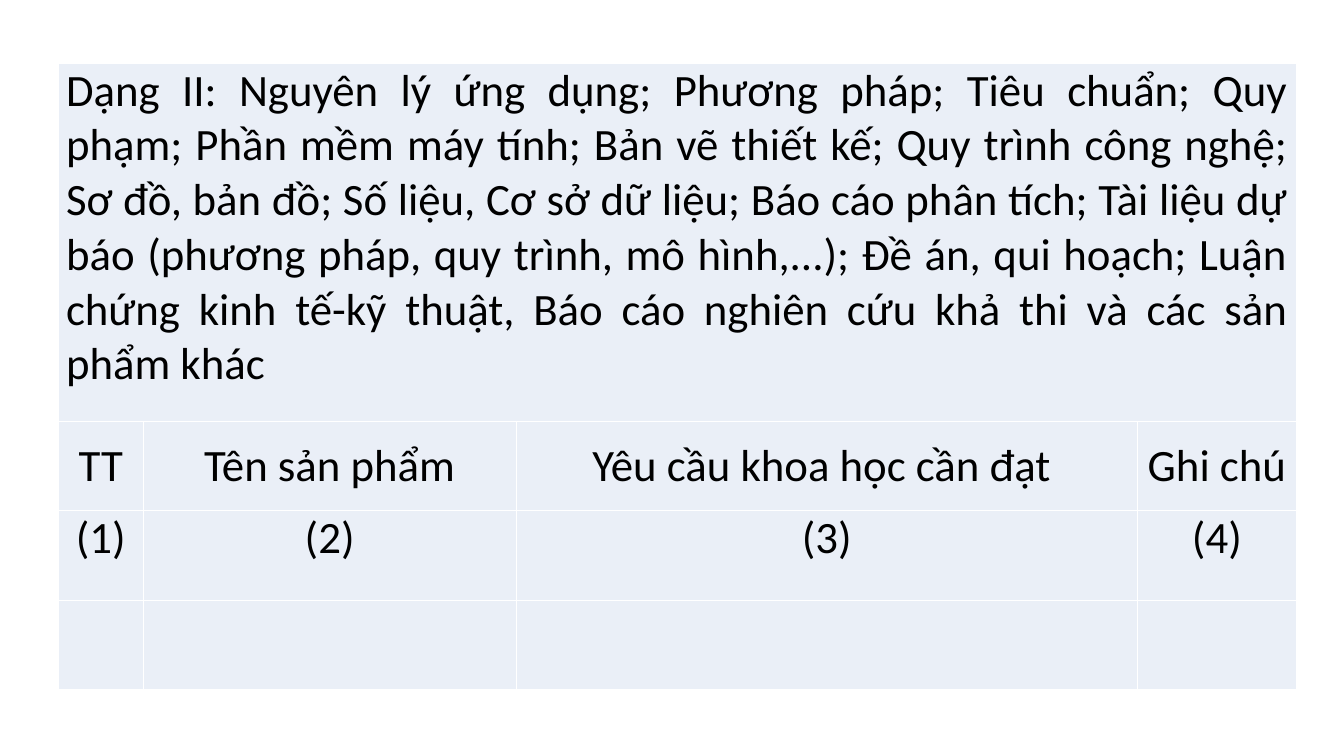
import pptx
import pptx.dml.color
import pptx.enum.text
import pptx.oxml
import pptx.oxml.ns
import pptx.util
from pptx.util import Inches, Pt

BLACK = pptx.dml.color.RGBColor(0x00, 0x00, 0x00)
WHITE = pptx.dml.color.RGBColor(0xFF, 0xFF, 0xFF)
PALE_BLUE = pptx.dml.color.RGBColor(0xEA, 0xEF, 0xF7)

ALIGN = pptx.enum.text.PP_ALIGN
ANCHOR = pptx.enum.text.MSO_ANCHOR

# Table grid: columns in inches, rows in points
LEFT, TOP = 0.58, 0.63
COLUMNS = [0.84, 3.7, 6.16, 1.58]
ROWS = [255.5, 64, 64, 64]
SIDE_MARGIN = Pt(5.4)

HEADING = (
    "Dạng II: Nguyên lý ứng dụng; Phương pháp; Tiêu chuẩn; Quy phạm; "
    "Phần mềm máy tính; Bản vẽ thiết kế; Quy trình công nghệ; Sơ đồ, bản đồ; "
    "Số liệu, Cơ sở dữ liệu; Báo cáo phân tích; Tài liệu dự báo (phương pháp, "
    "quy trình, mô hình,...); Đề án, qui hoạch; Luận chứng kinh tế-kỹ thuật, "
    "Báo cáo nghiên cứu khả thi và các sản phẩm khác"
)
LABELS = ["TT", "Tên sản phẩm", "Yêu cầu khoa học cần đạt ", "Ghi chú"]
NUMBERS = [f"({i})" for i in range(1, len(COLUMNS) + 1)]


def add_grid(s):
    """Add the table with its column widths and row heights."""
    frame = s.shapes.add_table(
        len(ROWS), len(COLUMNS), Inches(LEFT), Inches(TOP),
        Inches(sum(COLUMNS)), Pt(sum(ROWS)))
    table = frame.table
    for column, width in zip(table.columns, COLUMNS):
        column.width = Inches(width)
    for row, height in zip(table.rows, ROWS):
        row.height = Pt(height)
    return table


def style_cell(cell):
    """Give a cell its margins, white 1 pt borders and fill."""
    cell.margin_left = cell.margin_right = SIDE_MARGIN
    cell.margin_top = cell.margin_bottom = 0
    tc_pr = cell._tc.get_or_add_tcPr()
    for side in ("lnL", "lnR", "lnT", "lnB"):
        tc_pr.append(pptx.oxml.parse_xml(
            f'<a:{side} {pptx.oxml.ns.nsdecls("a")} w="{Pt(1)}"><a:solidFill>'
            f'<a:srgbClr val="{WHITE}"/></a:solidFill></a:{side}>'))
    cell.fill.solid()
    cell.fill.fore_color.rgb = PALE_BLUE


def write_cell(cell, text, align=ALIGN.CENTER, anchor=ANCHOR.TOP):
    cell.vertical_anchor = anchor
    p = cell.text_frame.paragraphs[0]
    p.alignment = align
    p.space_before = p.space_after = Pt(3)
    r = p.add_run()
    r.text = text
    r.font.name = "Calibri"
    r.font.size = Pt(32)
    r.font.bold = False
    r.font.color.rgb = BLACK


def main():
    prs = pptx.Presentation()
    prs.slide_width, prs.slide_height = Inches(13.33), Inches(7.5)
    s = prs.slides.add_slide(prs.slide_layouts[6])

    # Product table; the last row is left blank to be filled in
    table = add_grid(s)
    for cell in table.iter_cells():
        style_cell(cell)

    # Heading across all columns
    table.cell(0, 0).merge(table.cell(0, len(COLUMNS) - 1))
    write_cell(table.cell(0, 0), HEADING, ALIGN.JUSTIFY)

    # Column labels and their numbers
    for col, (label, number) in enumerate(zip(LABELS, NUMBERS)):
        write_cell(table.cell(1, col), label, anchor=ANCHOR.MIDDLE)
        write_cell(table.cell(2, col), number)

    prs.save("out.pptx")


if __name__ == "__main__":
    main()
